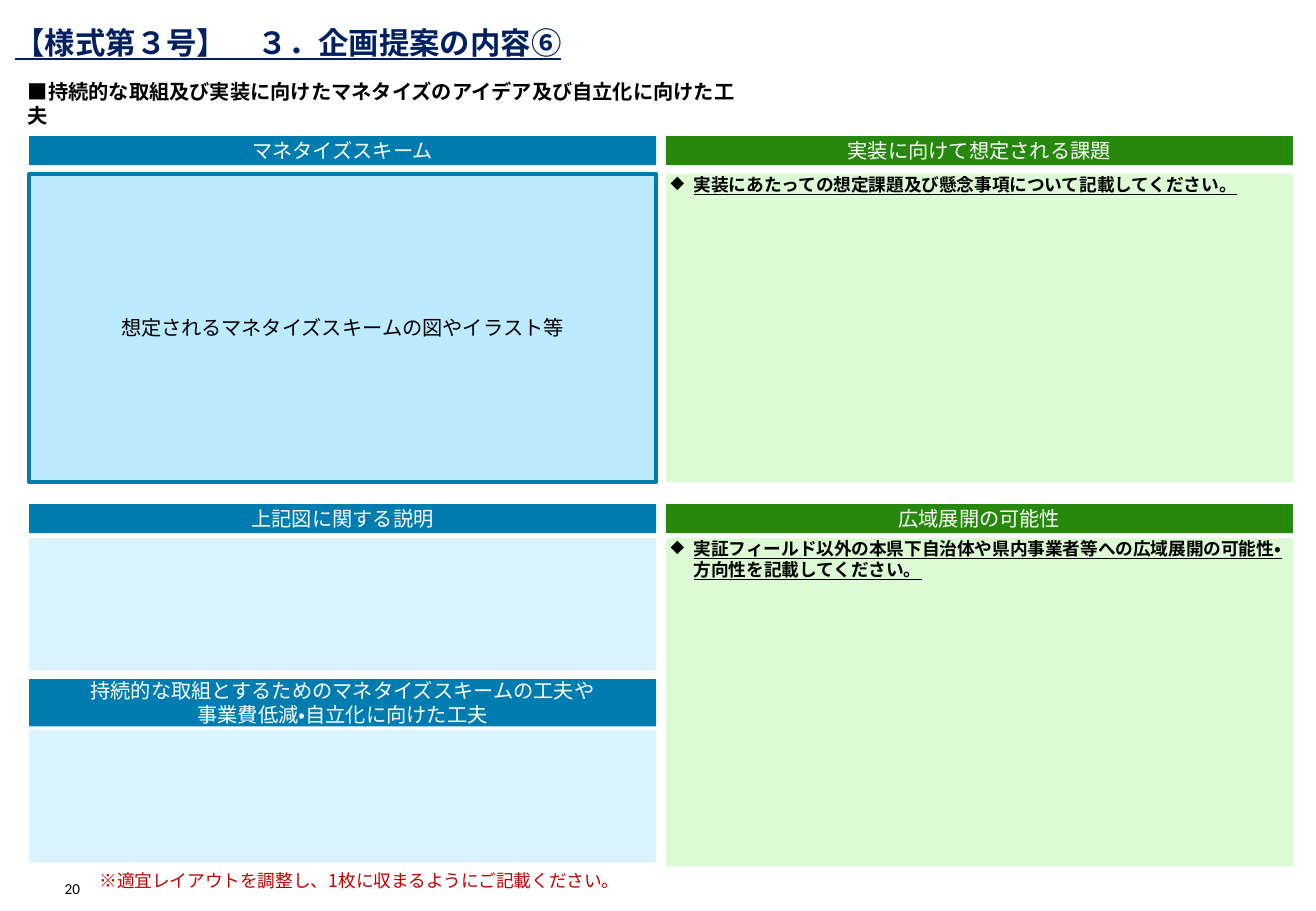
from lxml.etree import SubElement
from pptx import Presentation
from pptx.dml.color import RGBColor
from pptx.enum.lang import MSO_LANGUAGE_ID
from pptx.enum.shapes import MSO_SHAPE
from pptx.enum.text import MSO_ANCHOR, MSO_AUTO_SIZE, PP_ALIGN
from pptx.oxml.ns import qn
from pptx.util import Inches, Pt

COLORS = {
    "navy": "002060", "blue": "007CB0", "sky": "BCEBFF", "pale": "D9F3FF",
    "green": "26890D", "mint": "DCFBD5", "red": "C00000",
    "black": "000000", "white": "FFFFFF",
}
GOTHIC = "Noto Sans CJK JP"
LEFT, RIGHT, WIDE = 0.24, 5.48, 5.16
HEAD = 0.24
TOP, LOW = 1.12, 4.15


def color(name):
    return RGBColor.from_string(COLORS[name])


def write(shape, text, size, face, ink, align=PP_ALIGN.LEFT,
          anchor=MSO_ANCHOR.TOP, inset=(0, 0, 0, 0), bold=None, line=None,
          under=None, bullet=None, wrap=True, grow=False):
    frame = shape.text_frame
    frame.text = text
    frame.word_wrap = wrap
    frame.auto_size = MSO_AUTO_SIZE.SHAPE_TO_FIT_TEXT if grow else MSO_AUTO_SIZE.NONE
    frame.vertical_anchor = anchor
    (frame.margin_left, frame.margin_top,
     frame.margin_right, frame.margin_bottom) = map(Inches, inset)
    for para in frame.paragraphs:
        para.alignment = align
        if line:
            para.line_spacing = line
        if bullet:
            props = para._p.get_or_add_pPr()
            props.set("marL", str(Inches(0.19)))
            props.set("indent", str(Inches(-0.19)))
            SubElement(props, qn("a:buChar")).set("char", bullet)
        for run in para.runs:
            font = run.font
            font.size, font.name = Pt(size), face
            font.bold, font.underline = bold, under
            font.color.rgb = color(ink)
            font.language_id = MSO_LANGUAGE_ID.JAPANESE


def add_rect(slide, box, fill, edge=None):
    shape = slide.shapes.add_shape(MSO_SHAPE.RECTANGLE, *map(Inches, box))
    shape.shadow.inherit = False
    shape.fill.solid()
    shape.fill.fore_color.rgb = color(fill)
    if edge:
        shape.line.color.rgb = color(edge)
        shape.line.width = Pt(2.25)
    else:
        shape.line.fill.background()
    return shape


def add_label(slide, box, text, size, face, ink, **style):
    label = slide.shapes.add_textbox(*map(Inches, box))
    write(label, text, size, face, ink, **style)


def add_panel(slide, box, head, gap, title, tones, face="Calibri", edge=None):
    """Draw a heading bar over a body that fills the box; return the body."""
    left, top, width, height = box
    bar = add_rect(slide, (left, top, width, head), tones[0])
    write(bar, title, 12, face, "white", PP_ALIGN.CENTER, MSO_ANCHOR.MIDDLE)
    drop = head + gap
    return add_rect(slide, (left, top + drop, width, height - drop), tones[1], edge)


def add_blue(slide):
    scheme = add_panel(slide, (LEFT, TOP, WIDE, 2.85), HEAD, 0.07,
                       "マネタイズスキーム", ("blue", "sky"), edge="blue")
    write(scheme, "想定されるマネタイズスキームの図やイラスト等", 12, "Calibri",
          "black", PP_ALIGN.CENTER, MSO_ANCHOR.MIDDLE)
    tones = ("blue", "pale")
    add_panel(slide, (LEFT, LOW, WIDE, 1.37), HEAD, 0.04, "上記図に関する説明", tones)
    add_panel(slide, (LEFT, 5.59, WIDE, 1.51), 0.39, 0.03,
              "持続的な取組とするためのマネタイズスキームの工夫や\n"
              "事業費低減・自立化に向けた工夫", tones, "Arial")


def add_green(slide):
    panels = [
        (TOP, 2.85, 0.07, "実装に向けて想定される課題",
         "実装にあたっての想定課題及び懸念事項について記載してください。"),
        (LOW, 2.98, 0.04, "広域展開の可能性",
         "実証フィールド以外の本県下自治体や県内事業者等への広域展開の可能性・"
         "方向性を記載してください。"),
    ]
    for top, height, gap, title, text in panels:
        body = add_panel(slide, (RIGHT, top, WIDE, height), HEAD, gap, title,
                         ("green", "mint"))
        write(body, text, 10.5, "Arial", "black", inset=(0.04, 0, 0, 0),
              bold=True, under=True, bullet="◆")


def add_top(slide):
    title = slide.shapes.title
    title.left, title.top, title.width, title.height = map(Inches, (0.02, 0, 5.37, 0.51))
    write(title, "【様式第３号】　３．企画提案の内容⑥", 18, GOTHIC, "navy",
          inset=(0.1, 0.05, 0.1, 0.05), bold=True, under=True, line=1.5, grow=True)
    add_label(slide, (0.15, 0.63, 6.13, 0.24),
              "■持続的な取組及び実装に向けたマネタイズのアイデア及び自立化に向けた工夫",
              12, GOTHIC, "black", inset=(0.08, 0.02, 0.08, 0.02), bold=True, grow=True)


def add_foot(slide):
    add_label(slide, (0.46, 7.2, 0.2, 0.19), "20", 9, "Calibri", "black",
              align=PP_ALIGN.RIGHT, anchor=MSO_ANCHOR.BOTTOM, wrap=False)
    add_label(slide, (0.82, 7.02, 9.8, 0.47),
              "※適宜レイアウトを調整し、1枚に収まるようにご記載ください。",
              10.5, GOTHIC, "red", anchor=MSO_ANCHOR.MIDDLE, line=Pt(12))


def main():
    deck = Presentation()
    deck.slide_width, deck.slide_height = Inches(10.83), Inches(7.5)
    slide = deck.slides.add_slide(deck.slide_layouts[5])
    add_top(slide)
    add_blue(slide)
    add_green(slide)
    add_foot(slide)
    deck.save("out.pptx")


if __name__ == "__main__":
    main()
